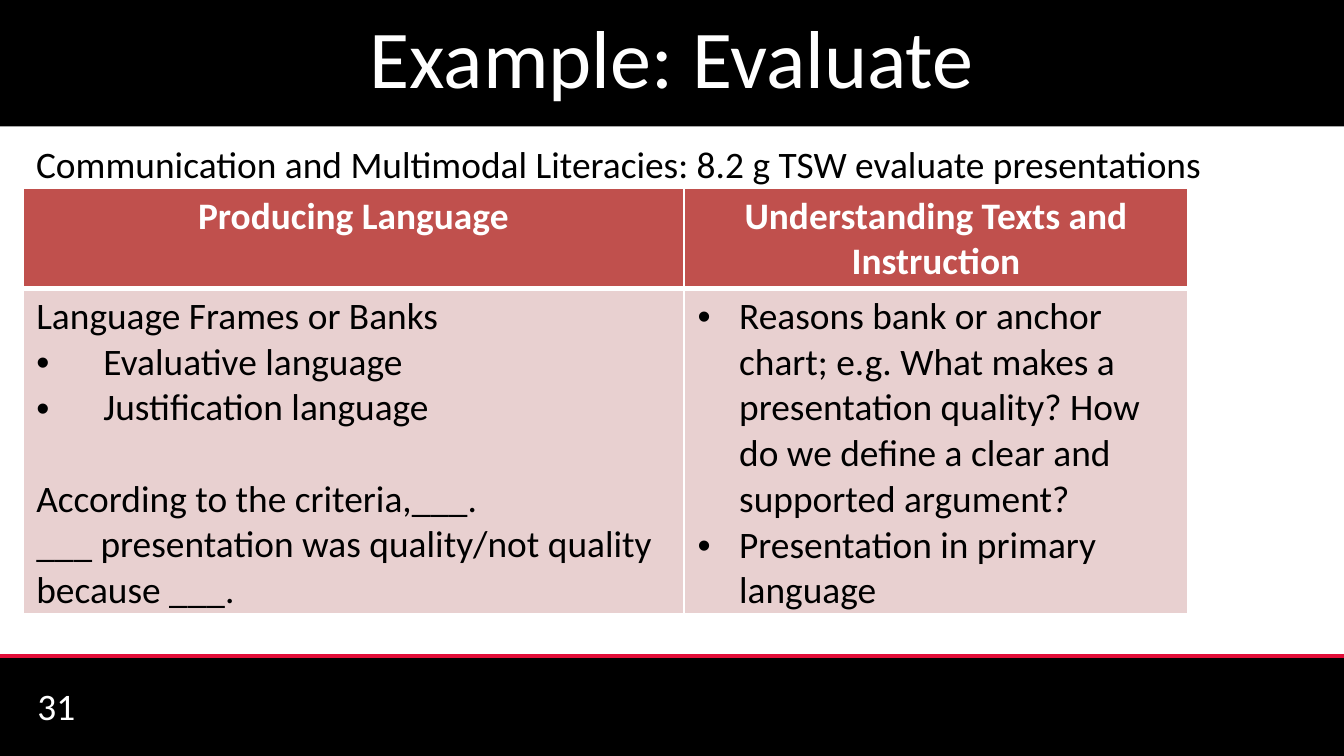
from lxml import etree
from pptx import Presentation
from pptx.dml.color import RGBColor
from pptx.enum.shapes import MSO_CONNECTOR, MSO_SHAPE
from pptx.enum.text import MSO_ANCHOR, PP_ALIGN
from pptx.oxml.ns import qn
from pptx.util import Inches, Pt

BLACK = RGBColor(0x00, 0x00, 0x00)
WHITE = RGBColor(0xFF, 0xFF, 0xFF)
CRIMSON = RGBColor(0xE2, 0x0D, 0x38)
BRICK = RGBColor(0xC0, 0x50, 0x4D)
BLUSH = RGBColor(0xE8, 0xD0, 0xD0)

FONT = "Calibri"
WIDTH = Inches(10)
HEIGHT = WIDTH * 9 // 16
MARGIN = Inches(0.17)
TITLE_HEIGHT = Inches(0.94)
FOOTER_TOP = Inches(4.88)
BLANK_LINE = 24.4

HEADERS = ["Producing Language", "Understanding Texts and Instruction"]
COLUMN_WEIGHTS = (4.92, 3.75)
ROW_WEIGHTS = (0.69, 2.31)
# Each paragraph: text, bullet indent in inches, space before in points
SUPPORTS = [
    [
        ("Language Frames or Banks", 0, 0),
        ("Evaluative language", 0.5, 0),
        ("Justification language", 0.5, 0),
        ("According to the criteria,___.", 0, BLANK_LINE),
        ("___ presentation was quality/not quality because ___.", 0, 0),
    ],
    [
        ("Reasons bank or anchor chart; e.g. What makes a presentation quality? "
         "How do we define a clear and supported argument?", 0.31, 0),
        ("Presentation in primary language", 0.31, 0),
    ],
]


def write(paragraph, text, size=20, color=BLACK, bold=False,
          align=PP_ALIGN.LEFT, indent=0, before=0):
    if indent:
        properties = paragraph._p.get_or_add_pPr()
        properties.set("marL", str(Inches(indent)))
        properties.set("indent", str(-Inches(indent)))
        etree.SubElement(properties, qn("a:buFont"), typeface="Arial")
        etree.SubElement(properties, qn("a:buChar"), char="•")
    paragraph.alignment = align
    paragraph.space_before = Pt(before)
    run = paragraph.add_run()
    run.text = text
    run.font.name, run.font.size, run.font.bold = FONT, Pt(size), bold
    run.font.color.rgb = color


def add_text(slide, box, text, anchor=MSO_ANCHOR.TOP, **style):
    frame = slide.shapes.add_textbox(*box).text_frame
    frame.word_wrap = True
    frame.vertical_anchor = anchor
    write(frame.paragraphs[0], text, **style)


def format_cell(cell, fill, bottom):
    """Draw white borders, the lower one of the given width, and fill the cell."""
    properties = cell._tc.get_or_add_tcPr()
    for side, width in (("L", 1), ("R", 1), ("T", 1), ("B", bottom)):
        line = etree.SubElement(properties, qn(f"a:ln{side}"), w=str(Pt(width)))
        solid = etree.SubElement(line, qn("a:solidFill"))
        etree.SubElement(solid, qn("a:srgbClr"), val=str(WHITE))
    cell.fill.solid()
    cell.fill.fore_color.rgb = fill
    cell.margin_left = cell.margin_right = Inches(0.1)
    cell.margin_top = cell.margin_bottom = Inches(0.04)


def add_title(slide, box, text):
    title = slide.shapes.title
    title.left, title.top, title.width, title.height = box
    title.fill.solid()
    title.fill.fore_color.rgb = BLACK
    title.text_frame.vertical_anchor = MSO_ANCHOR.TOP
    write(title.text_frame.paragraphs[0], text, size=44, color=WHITE,
          align=PP_ALIGN.CENTER)


def add_footer(slide, box, number):
    left, top, width, height = box
    band = slide.shapes.add_shape(MSO_SHAPE.RECTANGLE, *box)
    band.shadow.inherit = False
    band.fill.solid()
    band.fill.fore_color.rgb = BLACK
    band.line.fill.background()

    rule = slide.shapes.add_connector(MSO_CONNECTOR.STRAIGHT, left, top, left + width, top)
    rule.line.color.rgb = CRIMSON
    rule.line.width = Pt(2)
    etree.SubElement(rule._element.spPr, qn("a:effectLst"))

    number_box = (left + Inches(0.18), top + int(height * 0.3),
                  int(width * 0.23), int(height * 0.4))
    add_text(slide, number_box, number, anchor=MSO_ANCHOR.MIDDLE, color=WHITE)


def add_support_table(slide, box):
    width, height = box[2:]
    table = slide.shapes.add_table(2, len(HEADERS), *box).table
    table.horz_banding = False
    for column, weight in zip(table.columns, COLUMN_WEIGHTS):
        column.width = int(width * weight / sum(COLUMN_WEIGHTS))
    for row, weight in zip(table.rows, ROW_WEIGHTS):
        row.height = int(height * weight / sum(ROW_WEIGHTS))

    for column, (header, supports) in enumerate(zip(HEADERS, SUPPORTS)):
        head, body = table.cell(0, column), table.cell(1, column)
        format_cell(head, BRICK, bottom=3)
        write(head.text_frame.paragraphs[0], header, color=WHITE, bold=True,
              align=PP_ALIGN.CENTER)
        format_cell(body, BLUSH, bottom=1)
        frame = body.text_frame
        for position, (text, indent, before) in enumerate(supports):
            paragraph = frame.add_paragraph() if position else frame.paragraphs[0]
            write(paragraph, text, indent=indent, before=before)


def main():
    presentation = Presentation()
    presentation.slide_width, presentation.slide_height = WIDTH, HEIGHT
    slide = presentation.slides.add_slide(presentation.slide_layouts[5])
    add_footer(slide, (0, FOOTER_TOP, WIDTH, HEIGHT - FOOTER_TOP), "31")
    add_support_table(slide, (MARGIN, Inches(1.4), Inches(8.67), Inches(3)))
    add_text(slide, (MARGIN, Inches(1), Inches(9.67), Inches(2.56)),
             "Communication and Multimodal Literacies: 8.2 g TSW evaluate presentations")
    add_title(slide, (0, 0, WIDTH, TITLE_HEIGHT), "Example: Evaluate")
    presentation.save("out.pptx")


if __name__ == "__main__":
    main()
